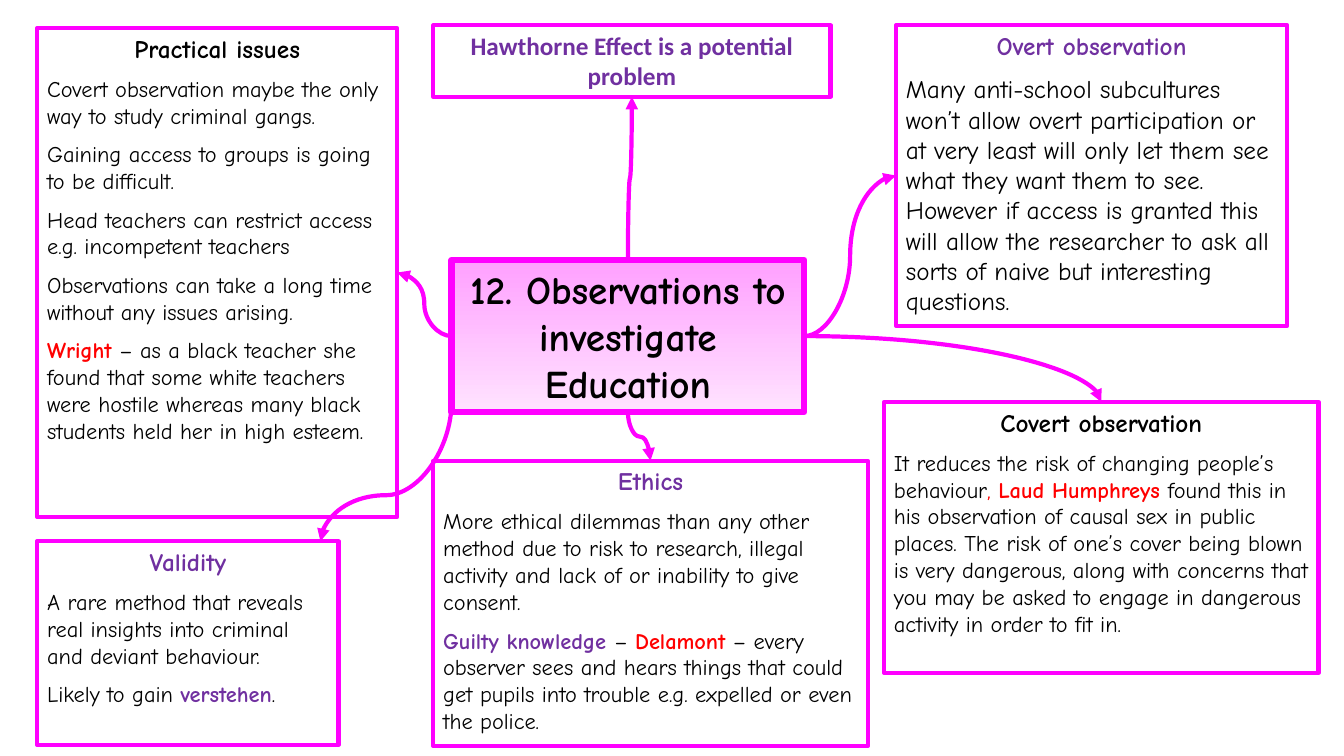
from dataclasses import dataclass

import pptx
import pptx.dml.color
import pptx.enum.shapes
import pptx.enum.text
import pptx.oxml.ns
import pptx.oxml.xmlchemy
import pptx.util

Cm, Pt = pptx.util.Cm, pptx.util.Pt
qn = pptx.oxml.ns.qn
Align = pptx.enum.text.PP_ALIGN


def rgb(code):
    return pptx.dml.color.RGBColor.from_string(code)


@dataclass(frozen=True)
class Theme:
    font: str = "Comic Neue"
    plain: str = "Calibri"
    edge: str = "FF00FF"
    top: str = "FFA0FF"
    base: str = "FFE3FF"
    black: str = "000000"
    red: str = "FF0000"
    purple: str = "7030A0"
    title: int = 28
    head: int = 18
    body: int = 16
    thick: float = 4.5
    line: float = 3
    gap: float = 0.52  # space before a paragraph, as a share of its type size


T = Theme()

# Left, top, width, height in cm
HUB = (11.38, 6.55, 8.89, 3.84)
ISSUES = (0.94, 0.71, 9.07, 12.32)
EFFECT = (10.92, 0.64, 10.01, 1.8)
OVERT = (22.58, 0.64, 9.86, 7.57)
COVERT = (22.28, 10.13, 10.95, 6.83)
VALID = (0.94, 13.64, 7.59, 5.13)
ETHICS = (10.92, 11.61, 10.95, 7.19)


def frame(slide, box, width):
    """Add an outlined box and return it with its empty text frame."""
    shape = slide.shapes.add_shape(
        pptx.enum.shapes.MSO_SHAPE.RECTANGLE, *map(Cm, box))
    shape.shadow.inherit = False
    shape.fill.background()
    shape.line.color.rgb = rgb(T.edge)
    shape.line.width = Pt(width)
    text = shape.text_frame
    text.word_wrap = True
    text.vertical_anchor = pptx.enum.text.MSO_ANCHOR.TOP
    return shape, text


def style(para, size, align, font=T.font):
    para.alignment = align
    para.font.size = Pt(size)
    para.font.name = font


def heading(text, words, size, color, font=T.font):
    para = text.paragraphs[0]
    para.text = words
    style(para, size, Align.CENTER, font)
    para.font.bold = True
    para.font.color.rgb = rgb(color)


def hub(slide, box, words):
    shape, text = frame(slide, box, T.thick)
    shape.fill.gradient()
    shape.fill.gradient_angle = 270
    for stop, color in zip(shape.fill.gradient_stops, (T.top, T.base)):
        stop.color.rgb = rgb(color)
    heading(text, words, T.title, T.black)


def card(slide, box, head, color, paras=(), size=T.body, font=T.font):
    """A paragraph is a list of runs: plain text, or (text, colour, bold)."""
    text = frame(slide, box, T.line)[1]
    heading(text, head, T.head, color, font)
    for runs in paras:
        para = text.add_paragraph()
        style(para, size, Align.LEFT)
        para.space_before = Pt(round(size * T.gap, 1))
        for item in runs:
            words, tint, bold = (item, T.black, False) if isinstance(item, str) else item
            run = para.add_run()
            run.text = words
            run.font.bold = bold
            run.font.color.rgb = rgb(tint)


def spot(box, across, down):
    left, top, width, height = box
    return left + across * width, top + down * height


def add(parent, tag, **attrs):
    child = pptx.oxml.xmlchemy.OxmlElement(tag)
    for name, value in attrs.items():
        child.set(name, value)
    parent.append(child)


def arrow(slide, start, end, upright=False, bend=0.5, kind="curvedConnector3"):
    """Draw a curved arrow; an upright one leaves its start vertically."""
    (x1, y1), (x2, y2) = start, end
    if upright:  # lay the curve on its side, then turn it by 90 degrees
        mx, my, dx, dy = (x1 + x2) / 2, (y1 + y2) / 2, (x2 - x1) / 2, (y2 - y1) / 2
        x1, y1, x2, y2 = mx - dy, my + dx, mx + dy, my - dx
    link = slide.shapes.add_connector(
        pptx.enum.shapes.MSO_CONNECTOR.CURVE, *map(Cm, (x1, y1, x2, y2)))
    link.line.color.rgb = rgb(T.edge)
    link.line.width = Pt(T.line)
    props = link.element.spPr
    if upright:
        props.find(qn("a:xfrm")).set("rot", "5400000")
    geom = props.find(qn("a:prstGeom"))
    geom.set("prst", kind)
    if bend != 0.5:
        add(geom.find(qn("a:avLst")), "a:gd", name="adj1",
            fmla=f"val {round(bend * 100000)}")
    add(props.find(qn("a:ln")), "a:tailEnd", type="triangle")
    add(props, "a:effectLst")


def cards(slide):
    card(slide, ISSUES, "Practical issues", T.black, [
        ["Covert observation maybe the only way to study criminal gangs."],
        ["Gaining access to groups is going to be difficult."],
        ["Head teachers can restrict access e.g. incompetent teachers"],
        ["Observations can take a long time without any issues arising."],
        [("Wright", T.red, True), " – as a black teacher she found that some "
         "white teachers were hostile whereas many black students held her in "
         "high esteem."]])
    card(slide, EFFECT, "Hawthorne Effect is a potential problem", T.purple,
         font=T.plain)
    card(slide, OVERT, "Overt observation", T.purple, [
        ["Many anti-school subcultures won’t allow overt participation or at "
         "very least will only let them see what they want them to see. "
         "However if access is granted this will allow the researcher to ask "
         "all sorts of naive but interesting questions."]], size=T.head)
    card(slide, COVERT, "Covert observation", T.black, [
        ["It reduces the risk of changing people’s behaviour",
         (", ", T.red, False), ("Laud Humphreys ", T.red, True),
         "found this in his observation of causal sex in public places. The "
         "risk of one’s cover being blown is very dangerous, along with "
         "concerns that you may be asked to engage in dangerous activity in "
         "order to fit in."]])
    card(slide, VALID, "Validity", T.purple, [
        ["A rare method that reveals real insights into criminal and deviant "
         "behaviour."],
        ["Likely to gain ", ("verstehen", T.purple, True), "."]])
    card(slide, ETHICS, "Ethics", T.purple, [
        ["More ethical dilemmas than any other method due to risk to research, "
         "illegal activity and lack of or inability to give consent."],
        [("Guilty knowledge ", T.purple, True), "– ", ("Delamont", T.red, True),
         " – every observer sees and hears things that could get pupils into "
         "trouble e.g. expelled or even the police."]])


def arrows(slide):
    right = spot(HUB, 1, 0.5)
    arrow(slide, spot(HUB, 0, 0.5), spot(ISSUES, 1, 0.5))
    arrow(slide, spot(HUB, 0.5, 0), spot(EFFECT, 0.5, 1), upright=True)
    arrow(slide, right, spot(OVERT, 0, 0.5))
    arrow(slide, right, spot(COVERT, 0.5, 0), kind="curvedConnector2")
    arrow(slide, spot(HUB, 0.5, 1), spot(ETHICS, 0.5, 0), upright=True)
    arrow(slide, spot(HUB, 0, 0.93), spot(VALID, 0.94, 0), upright=True, bend=0.67)


def main():
    deck = pptx.Presentation()
    deck.slide_width, deck.slide_height = Cm(33.87), Cm(19.05)
    slide = deck.slides.add_slide(deck.slide_layouts[6])
    hub(slide, HUB, "12. Observations to investigate Education")
    cards(slide)
    arrows(slide)
    deck.save("out.pptx")


if __name__ == "__main__":
    main()
